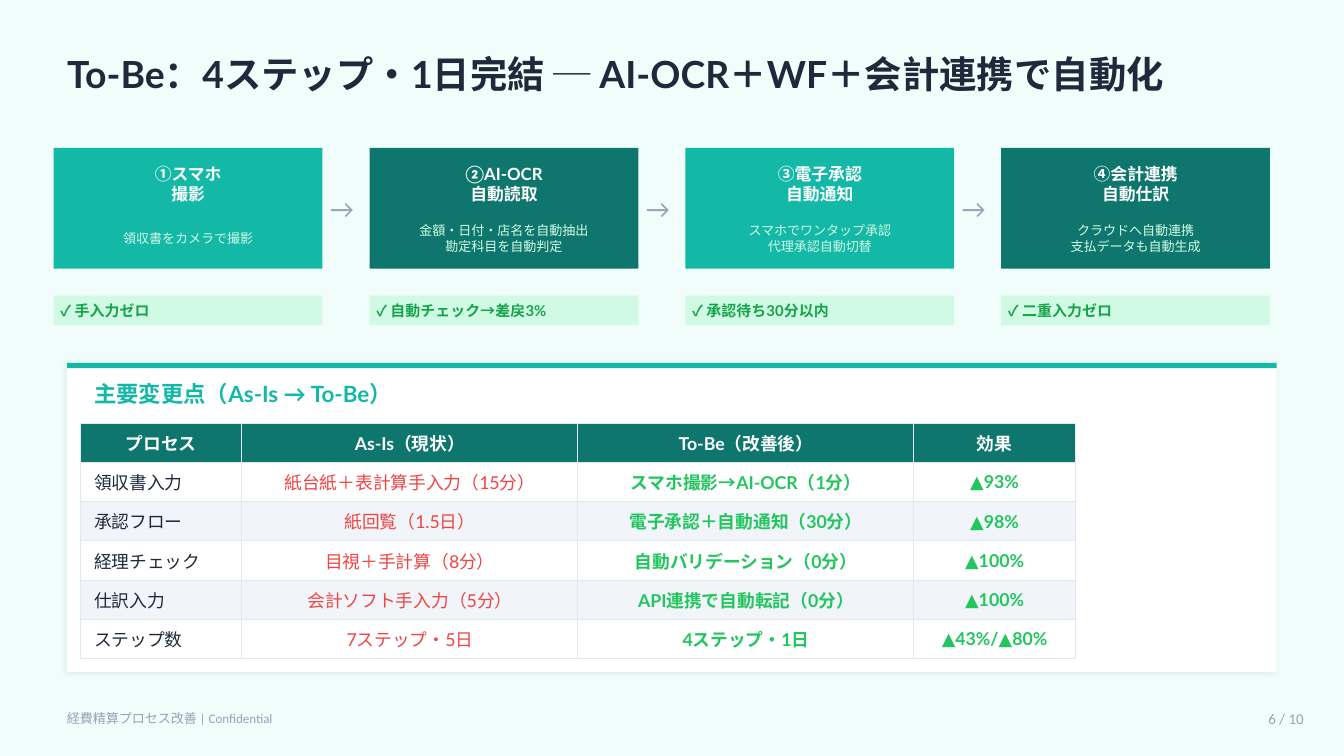
"""Build the To-Be process slide: four automated steps and a table of key changes."""
import dataclasses

import lxml.etree
import pptx
import pptx.dml.color
import pptx.enum.shapes
import pptx.enum.text
import pptx.oxml.ns
import pptx.util

Pt = pptx.util.Pt
RGB = pptx.dml.color.RGBColor.from_string
ALIGN = pptx.enum.text.PP_ALIGN
qn = pptx.oxml.ns.qn


@dataclasses.dataclass(frozen=True)
class Theme:
    background: str = "F0FDFA"
    ink: str = "1E293B"
    teal: str = "14B8A6"
    deep_teal: str = "0F766E"
    mint: str = "D1FAE5"
    white: str = "FFFFFF"
    muted: str = "94A3B8"
    stripe: str = "F1F5F9"
    border: str = "E2E8F0"
    before: str = "EF4444"
    after: str = "22C55E"
    benefit: str = "16A34A"
    shadow: str = "000000"
    heading_font: str = "Lato"
    body_font: str = "Calibri"
    title_size: float = 20
    arrow_size: float = 14
    heading_size: float = 12
    table_size: float = 9.5
    step_size: float = 9
    benefit_size: float = 8
    page_size: float = 8
    detail_size: float = 7


theme = Theme()


def write(frame, text, size, colour, font, bold=False, align=ALIGN.LEFT, inset=(0, 0)):
    frame.text = text
    frame.word_wrap = True
    frame.vertical_anchor = pptx.enum.text.MSO_ANCHOR.MIDDLE
    frame.margin_left = frame.margin_right = Pt(inset[0])
    frame.margin_top = frame.margin_bottom = Pt(inset[1])
    for paragraph in frame.paragraphs:
        paragraph.alignment = align
        for run in paragraph.runs:
            run.font.size = Pt(size)
            run.font.name = font
            run.font.bold = bold
            run.font.color.rgb = RGB(colour)


def add_panel(left, top, width, height, colour):
    panel = slide.shapes.add_shape(
        pptx.enum.shapes.MSO_SHAPE.RECTANGLE, Pt(left), Pt(top), Pt(width), Pt(height))
    panel.fill.solid()
    panel.fill.fore_color.rgb = RGB(colour)
    panel.line.fill.background()
    panel.shadow.inherit = False
    return panel


deck = pptx.Presentation()
deck.slide_width, deck.slide_height = Pt(720), Pt(405)
slide = deck.slides.add_slide(deck.slide_layouts[5])
slide.background.fill.solid()
slide.background.fill.fore_color.rgb = RGB(theme.background)

title = slide.shapes.title
title.left, title.top, title.width, title.height = Pt(36), Pt(21.6), Pt(648), Pt(36)
write(title.text_frame, "To-Be：4ステップ・1日完結 ─ AI-OCR＋WF＋会計連携で自動化",
      theme.title_size, theme.ink, theme.heading_font, True)
title.text_frame.auto_size = pptx.enum.text.MSO_AUTO_SIZE.NONE

steps = [
    ("①スマホ\n撮影", "領収書をカメラで撮影", "手入力ゼロ"),
    ("②AI-OCR\n自動読取", "金額・日付・店名を自動抽出\n勘定科目を自動判定", "自動チェック→差戻3%"),
    ("③電子承認\n自動通知", "スマホでワンタップ承認\n代理承認自動切替", "承認待ち30分以内"),
    ("④会計連携\n自動仕訳", "クラウドへ自動連携\n支払データも自動生成", "二重入力ゼロ"),
]
step_width, step_pitch = 144, 169.2
for index, (step, detail, benefit) in enumerate(steps):
    left = 28.8 + index * step_pitch
    add_panel(left, 79.2, step_width, 64.8, (theme.teal, theme.deep_teal)[index % 2])
    step_label = slide.shapes.add_textbox(Pt(left), Pt(80.64), Pt(step_width), Pt(35.28))
    write(step_label.text_frame, step, theme.step_size, theme.white,
          theme.heading_font, True, ALIGN.CENTER)
    step_detail = slide.shapes.add_textbox(Pt(left), Pt(111.6), Pt(step_width), Pt(32.4))
    write(step_detail.text_frame, detail, theme.detail_size, theme.mint,
          theme.body_font, align=ALIGN.CENTER)
    if index < len(steps) - 1:
        arrow = slide.shapes.add_textbox(
            Pt(left + step_width + 1.44), Pt(97.2), Pt(18), Pt(28.8))
        write(arrow.text_frame, "→", theme.arrow_size, theme.muted,
              theme.body_font, align=ALIGN.CENTER)
    add_panel(left, 158.4, step_width, 15.84, theme.mint)
    benefit_label = slide.shapes.add_textbox(
        Pt(left + 3.6), Pt(159.84), Pt(step_width - 7.2), Pt(12.96))
    write(benefit_label.text_frame, f"✓ {benefit}", theme.benefit_size, theme.benefit,
          theme.heading_font, True)

card = add_panel(36, 194.4, 648, 165.6, theme.white)
card_shadow = lxml.etree.SubElement(
    card._element.spPr.find(qn("a:effectLst")), qn("a:outerShdw"),
    blurRad=str(Pt(4)), dist=str(Pt(1)), dir=str(135 * 60000), algn="bl", rotWithShape="0")
shadow_colour = lxml.etree.SubElement(card_shadow, qn("a:srgbClr"), val=theme.shadow)
lxml.etree.SubElement(shadow_colour, qn("a:alpha"), val="8000")
add_panel(36, 194.4, 648, 2.88, theme.teal)
changes_heading = slide.shapes.add_textbox(Pt(50.4), Pt(201.6), Pt(288), Pt(18))
write(changes_heading.text_frame, "主要変更点（As-Is → To-Be）",
      theme.heading_size, theme.teal, theme.heading_font, True)

changes = [
    ("プロセス", "As-Is（現状）", "To-Be（改善後）", "効果"),
    ("領収書入力", "紙台紙＋表計算手入力（15分）", "スマホ撮影→AI-OCR（1分）", "▲93%"),
    ("承認フロー", "紙回覧（1.5日）", "電子承認＋自動通知（30分）", "▲98%"),
    ("経理チェック", "目視＋手計算（8分）", "自動バリデーション（0分）", "▲100%"),
    ("仕訳入力", "会計ソフト手入力（5分）", "API連携で自動転記（0分）", "▲100%"),
    ("ステップ数", "7ステップ・5日", "4ステップ・1日", "▲43%/▲80%"),
]
column_widths = (86.4, 180, 180, 86.4)
column_styles = [
    (theme.ink, theme.body_font, False, ALIGN.LEFT),
    (theme.before, theme.heading_font, False, ALIGN.CENTER),
    (theme.after, theme.heading_font, True, ALIGN.CENTER),
    (theme.after, theme.heading_font, True, ALIGN.CENTER),
]
header_style = (theme.white, theme.heading_font, True, ALIGN.CENTER)
row_height = 21
change_table = slide.shapes.add_table(
    len(changes), len(column_widths), Pt(43.2), Pt(226.8),
    Pt(sum(column_widths)), Pt(row_height * len(changes))).table
for column, width in zip(change_table.columns, column_widths):
    column.width = Pt(width)
for row_index, change in enumerate(changes):
    change_table.rows[row_index].height = Pt(row_height)
    for column_index, entry in enumerate(change):
        cell = change_table.cell(row_index, column_index)
        style = column_styles[column_index] if row_index else header_style
        write(cell.text_frame, entry, theme.table_size, *style)
        cell.vertical_anchor = pptx.enum.text.MSO_ANCHOR.MIDDLE
        for side in ("a:lnL", "a:lnR", "a:lnT", "a:lnB"):
            edge = lxml.etree.SubElement(
                cell._tc.get_or_add_tcPr(), qn(side), w=str(Pt(0.5)))
            edge_fill = lxml.etree.SubElement(edge, qn("a:solidFill"))
            lxml.etree.SubElement(edge_fill, qn("a:srgbClr"), val=theme.border)
        cell.fill.solid()
        body_fill = (theme.stripe, theme.white)[row_index % 2]
        cell.fill.fore_color.rgb = RGB(body_fill if row_index else theme.deep_teal)

page_number = slide.shapes.add_textbox(Pt(655.2), Pt(375.84), Pt(50.4), Pt(18))
write(page_number.text_frame, "6 / 10", theme.page_size, theme.muted,
      theme.body_font, align=ALIGN.RIGHT, inset=(7.2, 3.6))
footer = slide.shapes.add_textbox(Pt(28.8), Pt(375.84), Pt(324), Pt(18))
write(footer.text_frame, "経費精算プロセス改善 | Confidential", theme.detail_size,
      theme.muted, theme.body_font, inset=(7.2, 3.6))

deck.save("out.pptx")
